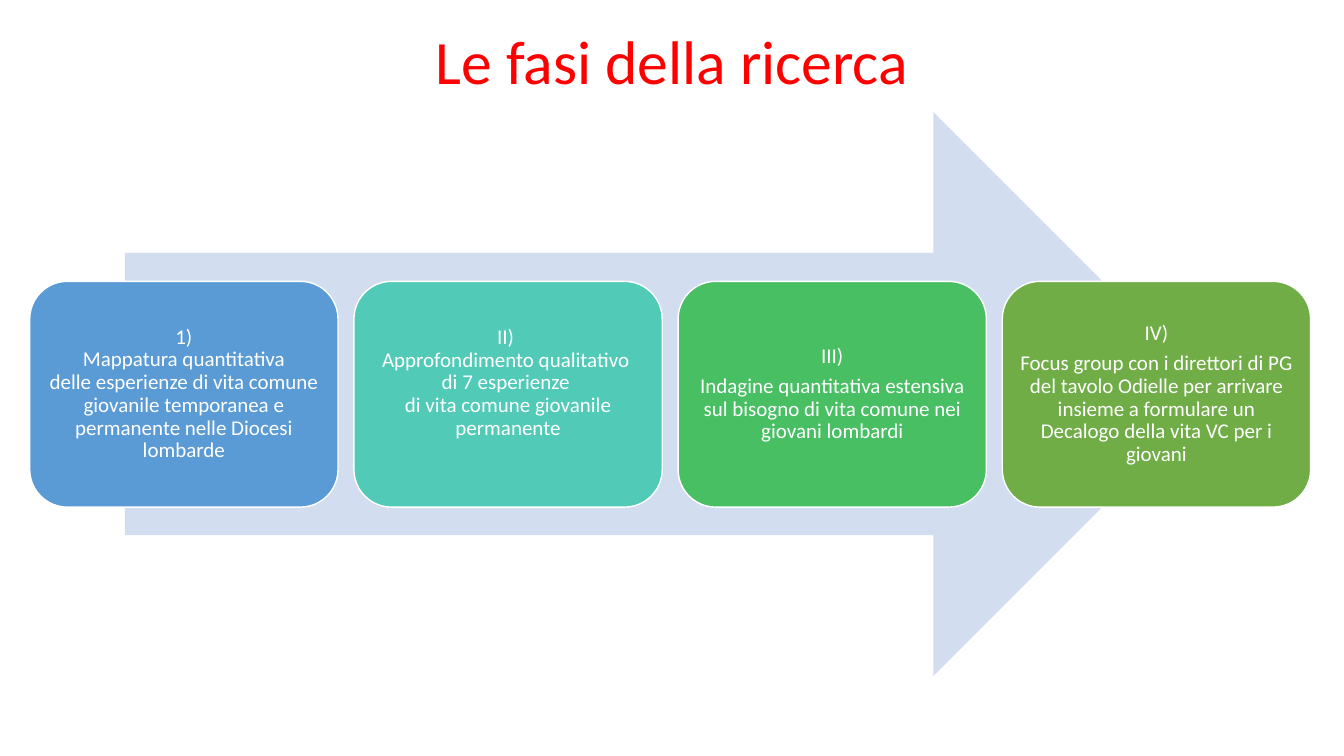
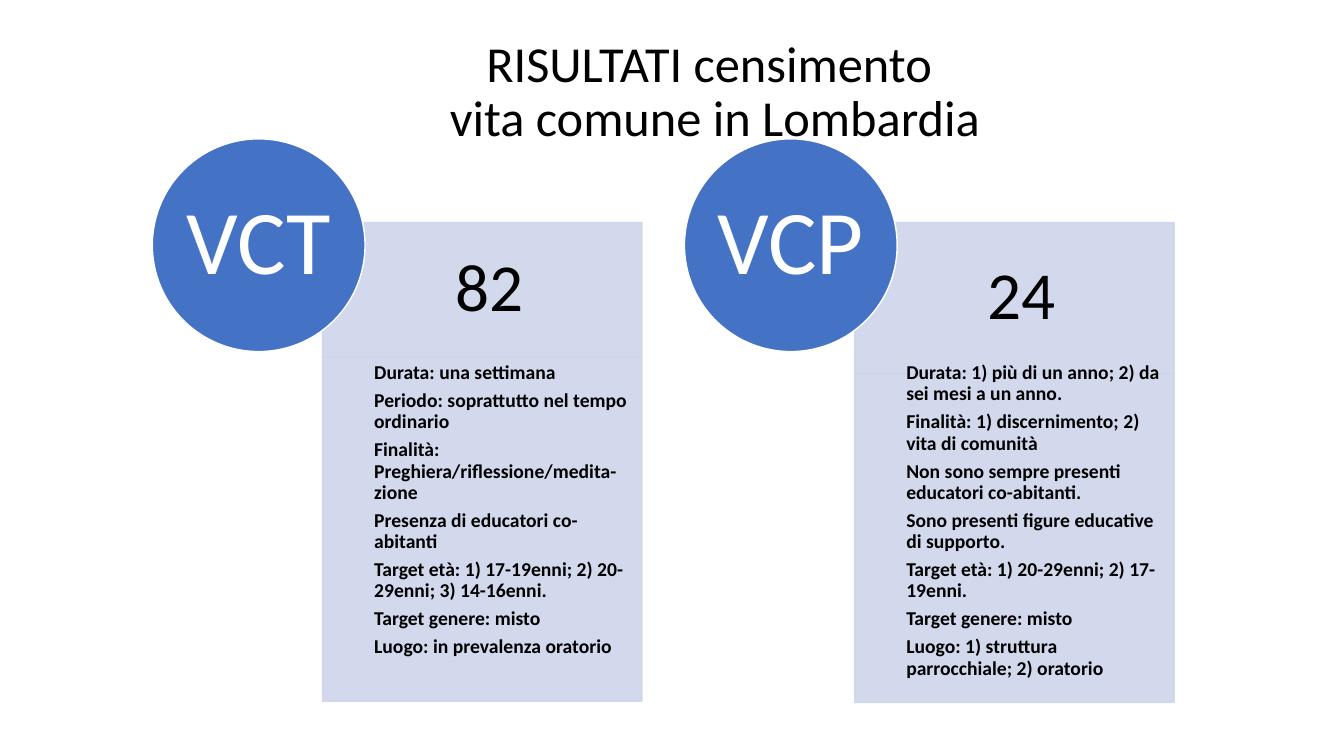
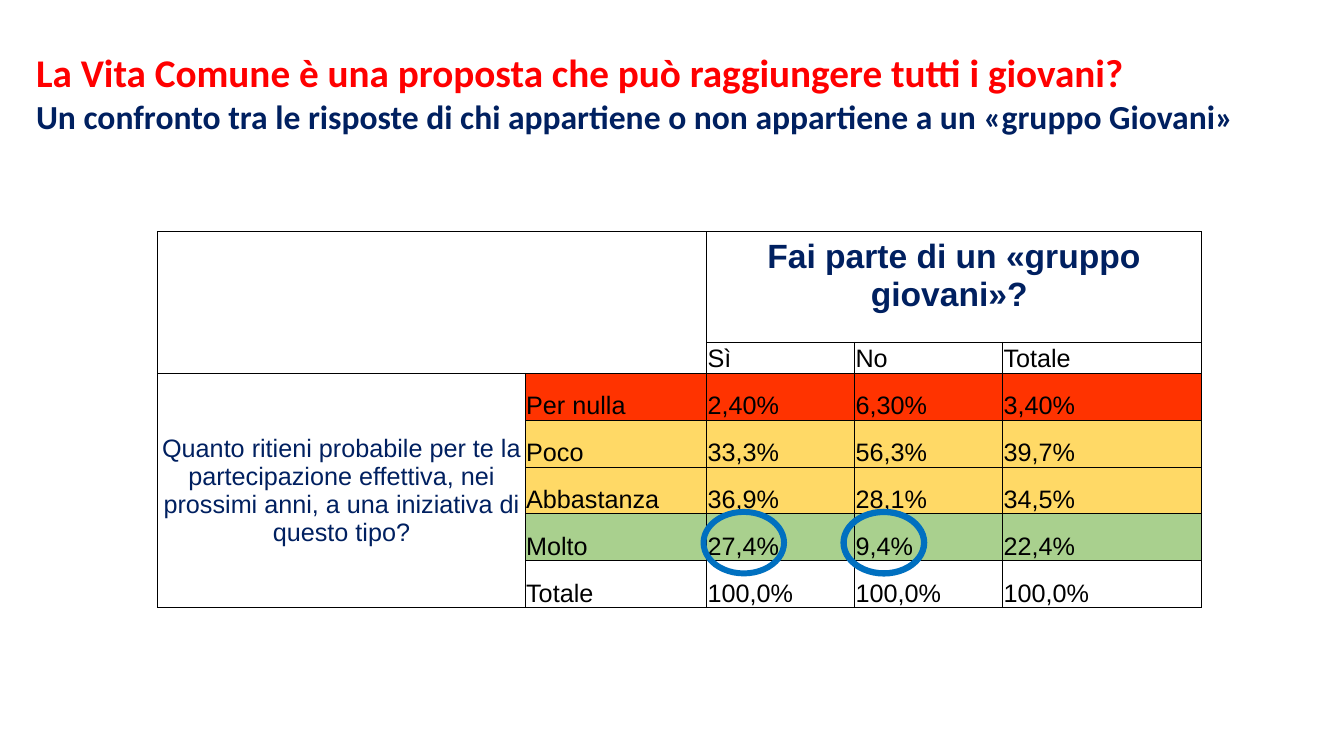
from lxml import etree
from pptx import Presentation
from pptx.dml.color import RGBColor
from pptx.enum.shapes import MSO_SHAPE
from pptx.enum.text import MSO_ANCHOR, PP_ALIGN
from pptx.oxml.ns import qn
from pptx.util import Cm, Pt

ARROW, ROUNDED = MSO_SHAPE.RIGHT_ARROW, MSO_SHAPE.ROUNDED_RECTANGLE
RECTANGLE, OVAL = MSO_SHAPE.RECTANGLE, MSO_SHAPE.OVAL
LEFT, CENTER = PP_ALIGN.LEFT, PP_ALIGN.CENTER
TOP, MIDDLE, BOTTOM = MSO_ANCHOR.TOP, MSO_ANCHOR.MIDDLE, MSO_ANCHOR.BOTTOM

# Shared colours
WHITE, BLACK, RED, NAVY = "FFFFFF", "000000", "FF0000", "002060"
PALE_ARROW, PALE_CARD, BADGE, RING = "D2DEEF", "CFD5EA", "4472C4", "0070C0"
ROW_RED, ROW_YELLOW, ROW_GREEN = "FF3300", "FFD966", "A9D08E"

PHASES = [
    ("5B9BD5", 0, 0.15, [
        "1)", "Mappatura quantitativa",
        "delle esperienze di vita comune giovanile temporanea e permanente "
        "nelle Diocesi lombarde"]),
    ("52CAB8", 0, 0.71, [
        "II) ", "Approfondimento qualitativo ", "di 7 esperienze ",
        "di vita comune giovanile permanente"]),
    ("49BF64", 5.25, 0.15, [
        "III)",
        "Indagine quantitativa estensiva sul bisogno di vita comune nei "
        "giovani lombardi"]),
    ("70AD47", 5.25, 0.15, [
        "IV)",
        "Focus group con i direttori di PG del tavolo Odielle per arrivare "
        "insieme a formulare un Decalogo della vita VC per i giovani"]),
]

RESULTS = [
    ("VCT", "82", 3.38, 12.06, [
        "Durata: una settimana",
        "Periodo: soprattutto nel tempo ordinario",
        "Finalità: Preghiera/riflessione/medita-zione",
        "Presenza di educatori co-abitanti",
        "Target età: 1) 17-19enni; 2) 20-29enni; 3) 14-16enni.",
        "Target genere: misto",
        "Luogo: in prevalenza oratorio"]),
    ("VCP", "24", 3.81, 12.09, [
        "Durata: 1) più di un anno; 2) da sei mesi a un anno.",
        "Finalità: 1) discernimento; 2) vita di comunità",
        "Non sono sempre presenti educatori co-abitanti.",
        "Sono presenti figure educative di supporto.",
        "Target età: 1) 20-29enni; 2) 17-19enni.",
        "Target genere: misto",
        "Luogo: 1) struttura parrocchiale; 2) oratorio"]),
]

ANSWERS = [
    (None, ["", "Sì", "No", "Totale"]),
    (ROW_RED, ["Per nulla", "2,40%", "6,30%", "3,40%"]),
    (ROW_YELLOW, ["Poco", "33,3%", "56,3%", "39,7%"]),
    (ROW_YELLOW, ["Abbastanza", "36,9%", "28,1%", "34,5%"]),
    (ROW_GREEN, ["Molto", "27,4%", "9,4%", "22,4%"]),
    (None, ["Totale", "100,0%", "100,0%", "100,0%"]),
]


def color(value):
    return RGBColor.from_string(value)


def font(size, hue=BLACK, bold=False, name="Calibri"):
    return {"size": Pt(size), "bold": bold, "name": name, "hue": hue}


def write(frame, lines, style, align=CENTER, spacing=0.9, after=0):
    """Each line is a string, or a pair of string and its own style."""
    for index, line in enumerate(lines):
        content, look = line if isinstance(line, tuple) else (line, style)
        para = frame.paragraphs[0] if index == 0 else frame.add_paragraph()
        para.text = content
        layout = {"alignment": align, "line_spacing": spacing,
                  "space_after": Pt(after)}
        for key, value in layout.items():
            setattr(para, key, value)
        for span in para.runs:
            for key, value in look.items():
                if key == "hue":
                    span.font.color.rgb = color(value)
                else:
                    setattr(span.font, key, value)


def set_frame(frame, anchor=MIDDLE, insets=(0, 0, 0, 0), wrap=True):
    frame.word_wrap = wrap
    frame.vertical_anchor = anchor
    for side, inset in zip(("left", "top", "right", "bottom"), insets):
        setattr(frame, "margin_" + side, Cm(inset))
    return frame


def add_text(page, box, lines, style, anchor=MIDDLE,
             insets=(0.25, 0.13, 0.25, 0.13), **layout):
    shape = page.shapes.add_textbox(*map(Cm, box))
    write(set_frame(shape.text_frame, anchor, insets), lines, style, **layout)


def add_panel(page, kind, box, fill=None, line=None, width=1):
    shape = page.shapes.add_shape(kind, *map(Cm, box))
    shape.shadow.inherit = False
    if fill:
        shape.fill.solid()
        shape.fill.fore_color.rgb = color(fill)
    else:
        shape.fill.background()
    if line:
        shape.line.color.rgb = color(line)
        shape.line.width = Pt(width)
    else:
        shape.line.fill.background()
    return shape


def make_translucent(shape, percent):
    for hue in shape.fill._xPr.iter(qn("a:srgbClr")):
        etree.SubElement(hue, qn("a:alpha"), val=str(percent * 1000))


def add_border(cell, hue, width):
    properties = cell._tc.get_or_add_tcPr()
    for index, side in enumerate(("a:lnL", "a:lnR", "a:lnT", "a:lnB")):
        line = etree.Element(qn(side), w=str(Pt(width)))
        fill = etree.SubElement(line, qn("a:solidFill"))
        etree.SubElement(fill, qn("a:srgbClr"), val=hue)
        properties.insert(index, line)


def add_phases(page, box):
    """Row of equal boxes, one for each phase."""
    left, top, width, height = box
    gap = 0.4
    step = (width + gap) / len(PHASES)
    for index, (fill, after, bottom, lines) in enumerate(PHASES):
        phase = add_panel(page, ROUNDED,
                          (left + index * step, top, step - gap, height),
                          fill, WHITE)
        # The corner rounding already insets the text a little
        set_frame(phase.text_frame, insets=(0.15, 0.15, 0.15, bottom))
        write(phase.text_frame, lines, font(15, WHITE), after=after)


def add_result(page, left, top, result):
    """Card in two parts with a round badge over its corner."""
    badge_text, count, head, height, lines = result
    width, indent, badge_size = 8.05, 1.3, 5.36
    parts = [add_panel(page, RECTANGLE, (left, top + offset, width, size),
                       PALE_CARD, PALE_CARD)
             for offset, size in ((0, head), (head, height - head))]
    for part in parts:
        make_translucent(part, 90)
    header = set_frame(parts[0].text_frame, insets=(indent, 0, 0.94, 0))
    write(header, [count], font(48))
    add_text(page, (left + indent, top + 3.53, 6.48, 8.4), lines,
             font(14, bold=True), TOP, (0, 0, 0, 0), align=LEFT, after=4.9)
    badge = add_panel(page, OVAL, (left - 4.29, top - 2.11,
                                   badge_size, badge_size), BADGE, WHITE)
    write(set_frame(badge.text_frame, wrap=False), [badge_text],
          font(65, WHITE))


def add_answers(page, left, top):
    """Cross table of the answers."""
    widths = [9.27, 4.57, 3.73, 3.73, 5]
    heights = [2.72, 0.78] + [1.18] * 5
    frame = page.shapes.add_table(len(heights), len(widths), Cm(left), Cm(top),
                                  Cm(sum(widths)), Cm(sum(heights)))
    table = frame.table
    table.first_row = table.horz_banding = False
    for column, width in zip(table.columns, widths):
        column.width = Cm(width)
    for row, height in zip(table.rows, heights):
        row.height = Cm(height)

    def fill_cell(row, column, lines, look, **layout):
        write(table.cell(row, column).text_frame, lines, look,
              spacing=1, **layout)

    for cell in table.iter_cells():
        cell.fill.background()
        cell.vertical_anchor = BOTTOM
        for side, inset in (("left", 0.02), ("right", 0.02),
                            ("top", 0.02), ("bottom", 0)):
            setattr(cell, "margin_" + side, Cm(inset))
        add_border(cell, BLACK, 0.5)

    for row, (fill, values) in enumerate(ANSWERS, 1):
        for column, value in enumerate(values, 1):
            if value:
                fill_cell(row, column, [value], font(18, name="Arial"),
                          align=LEFT)
            if fill:
                cell = table.cell(row, column)
                cell.fill.solid()
                cell.fill.fore_color.rgb = color(fill)

    # Merged headings
    for start, end in (((0, 0), (1, 1)), ((0, 2), (0, 4)), ((2, 0), (6, 0))):
        table.cell(*start).merge(table.cell(*end))
    fill_cell(0, 2, ["Fai parte di un «gruppo giovani»? "],
              font(24, NAVY, True, "Arial"))
    table.cell(0, 2).margin_bottom = Cm(0.73)
    fill_cell(2, 0, ["Quanto ritieni probabile per te la partecipazione "
                     "effettiva, nei prossimi anni, a una iniziativa di "
                     "questo tipo?"], font(18, NAVY, name="Arial"))
    table.cell(2, 0).vertical_anchor = MIDDLE


def build_phases(page):
    add_text(page, (2.34, 0.05, 29.21, 3.15), ["Le fasi della ricerca"],
             font(44, RED))
    add_panel(page, ARROW, (3.15, 2.82, 27.48, 14.22), PALE_ARROW)
    add_phases(page, (0.75, 7.09, 32.28, 5.69))


def build_results(page):
    add_text(page, (2.59, 0.79, 30.86, 3.12),
             ["RISULTATI censimento \nvita comune in Lombardia"], font(36))
    for index, result in enumerate(RESULTS):
        add_result(page, 8.13 + index * 13.41, 5.61, result)


def build_comparison(page):
    add_answers(page, 3.97, 5.84)
    # Rings around the compared values
    for left, width in ((17.73, 4.25), (21.26, 4.5)):
        add_panel(page, OVAL, (left, 12.9, 2.03, 1.55), None, RING, width)
    add_text(page, (0.66, 1.09, 31.55, 2.49), [
        ("La Vita Comune è una proposta che può raggiungere tutti i giovani?",
         font(28, RED, True)),
        ("Un confronto tra le risposte di chi appartiene o non appartiene "
         "a un «gruppo Giovani»", font(24, NAVY, True)),
    ], None, TOP, align=LEFT, spacing=1)


def main():
    deck = Presentation()
    deck.slide_width, deck.slide_height = Cm(33.87), Cm(19.05)
    for build in (build_phases, build_results, build_comparison):
        build(deck.slides.add_slide(deck.slide_layouts[6]))
    deck.save("out.pptx")


if __name__ == "__main__":
    main()
